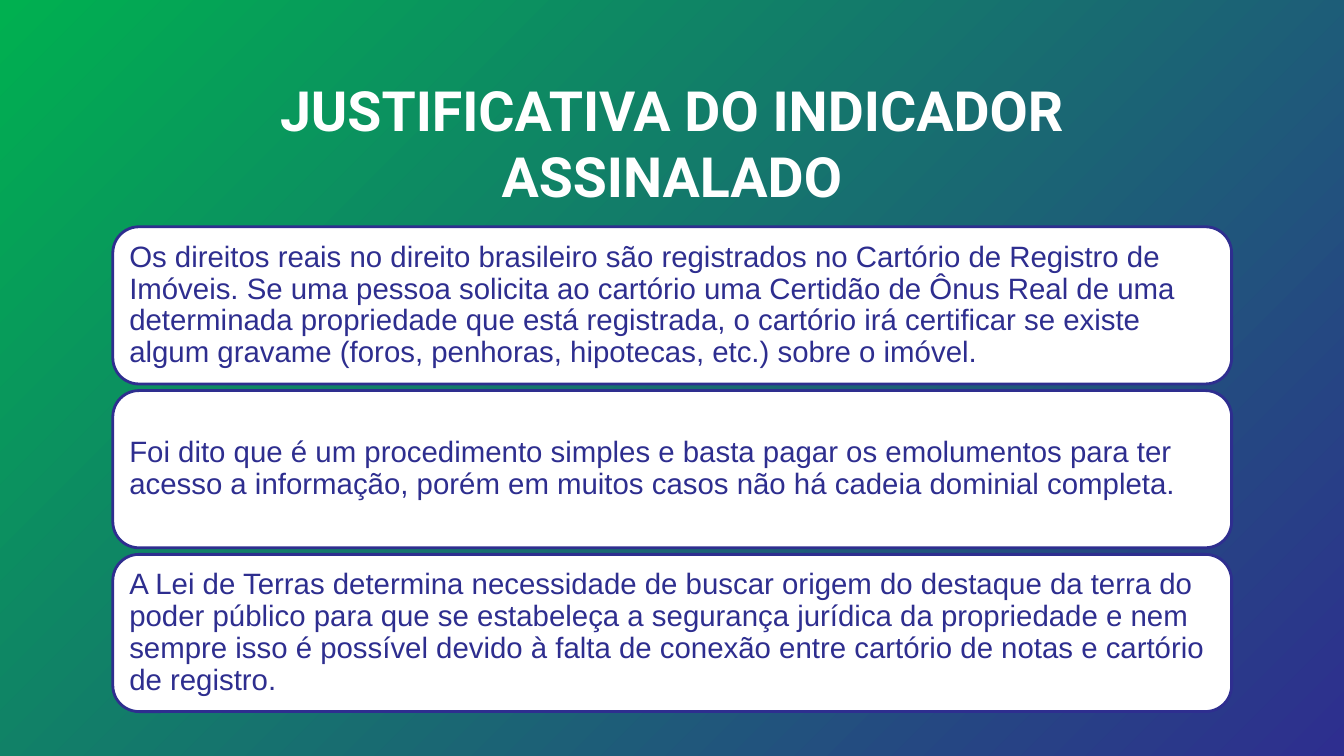
from dataclasses import dataclass

from pptx import Presentation
from pptx.dml.color import RGBColor
from pptx.enum.shapes import MSO_SHAPE as Preset
from pptx.enum.text import MSO_ANCHOR as Anchor, PP_ALIGN as Align
from pptx.shapes.autoshape import Shape
from pptx.slide import Slide
from pptx.util import Pt

GREEN = "00B050"
INDIGO = "2E2E8F"
WHITE = "FFFFFF"


@dataclass(frozen=True)
class Box:
    left: float
    top: float
    width: float
    height: float

    def lengths(self) -> tuple[Pt, Pt, Pt, Pt]:
        return Pt(self.left), Pt(self.top), Pt(self.width), Pt(self.height)


@dataclass(frozen=True)
class Card:
    box: Box
    text: str


TITLE_BOX = Box(75, 46.8, 810, 60.5)
CARD_TOP = 162
CARD_PITCH = 117
REASONS = [
    "Os direitos reais no direito brasileiro são registrados no Cartório de Registro de Imóveis. "
    "Se uma pessoa solicita ao cartório uma Certidão de Ônus Real de uma determinada propriedade "
    "que está registrada, o cartório irá certificar se existe algum gravame "
    "(foros, penhoras, hipotecas, etc.) sobre o imóvel.",
    "Foi dito que é um procedimento simples e basta pagar os emolumentos para ter acesso "
    "a informação, porém em muitos casos não há cadeia dominial completa.",
    "A Lei de Terras determina necessidade de buscar origem do destaque da terra do poder público "
    "para que se estabeleça a segurança jurídica da propriedade e nem sempre isso é possível "
    "devido à falta de conexão entre cartório de notas e cartório de registro.",
]
CARDS = [
    Card(Box(80.6, CARD_TOP + index * CARD_PITCH, 799.2, 112.3), reason)
    for index, reason in enumerate(REASONS)
]


def color(value: str) -> RGBColor:
    return RGBColor.from_string(value)


def write_text(shape: Shape, text: str, *, font: str, size: float, hue: str,
               bold: bool = False, align: Align = Align.LEFT,
               anchor: Anchor = Anchor.TOP, inset: float = 7.2,
               line_spacing: float = 1.0) -> None:
    frame = shape.text_frame
    frame.word_wrap = True
    frame.vertical_anchor = anchor
    frame.margin_left = frame.margin_right = Pt(inset)
    frame.margin_top = frame.margin_bottom = Pt(inset)
    paragraph = frame.paragraphs[0]
    paragraph.alignment = align
    paragraph.line_spacing = line_spacing
    run = paragraph.add_run()
    run.text = text
    run.font.name = font
    run.font.size = Pt(size)
    run.font.bold = bold
    run.font.color.rgb = color(hue)


def paint_background(slide: Slide) -> None:
    fill = slide.background.fill
    fill.gradient()
    fill.gradient_angle = 315
    for stop, position, hue in zip(fill.gradient_stops, (0, 1), (GREEN, INDIGO)):
        stop.position = position
        stop.color.rgb = color(hue)


def draw_card(slide: Slide, card: Card) -> None:
    shape = slide.shapes.add_shape(Preset.ROUNDED_RECTANGLE, *card.box.lengths())
    shape.shadow.inherit = False
    shape.fill.solid()
    shape.fill.fore_color.rgb = color(WHITE)
    shape.line.color.rgb = color(INDIGO)
    shape.line.width = Pt(2)
    write_text(shape, card.text, font="Arial", size=21, hue=INDIGO,
               anchor=Anchor.MIDDLE, inset=6.3, line_spacing=0.9)


def main() -> None:
    presentation = Presentation()
    presentation.slide_width = Pt(960)
    presentation.slide_height = Pt(540)
    slide = presentation.slides.add_slide(presentation.slide_layouts[6])
    paint_background(slide)
    title = slide.shapes.add_textbox(*TITLE_BOX.lengths())
    write_text(title, "JUSTIFICATIVA DO INDICADOR ASSINALADO", font="Roboto",
               size=39.6, hue=WHITE, bold=True, align=Align.CENTER)
    for card in CARDS:
        draw_card(slide, card)
    presentation.save("out.pptx")


if __name__ == "__main__":
    main()
